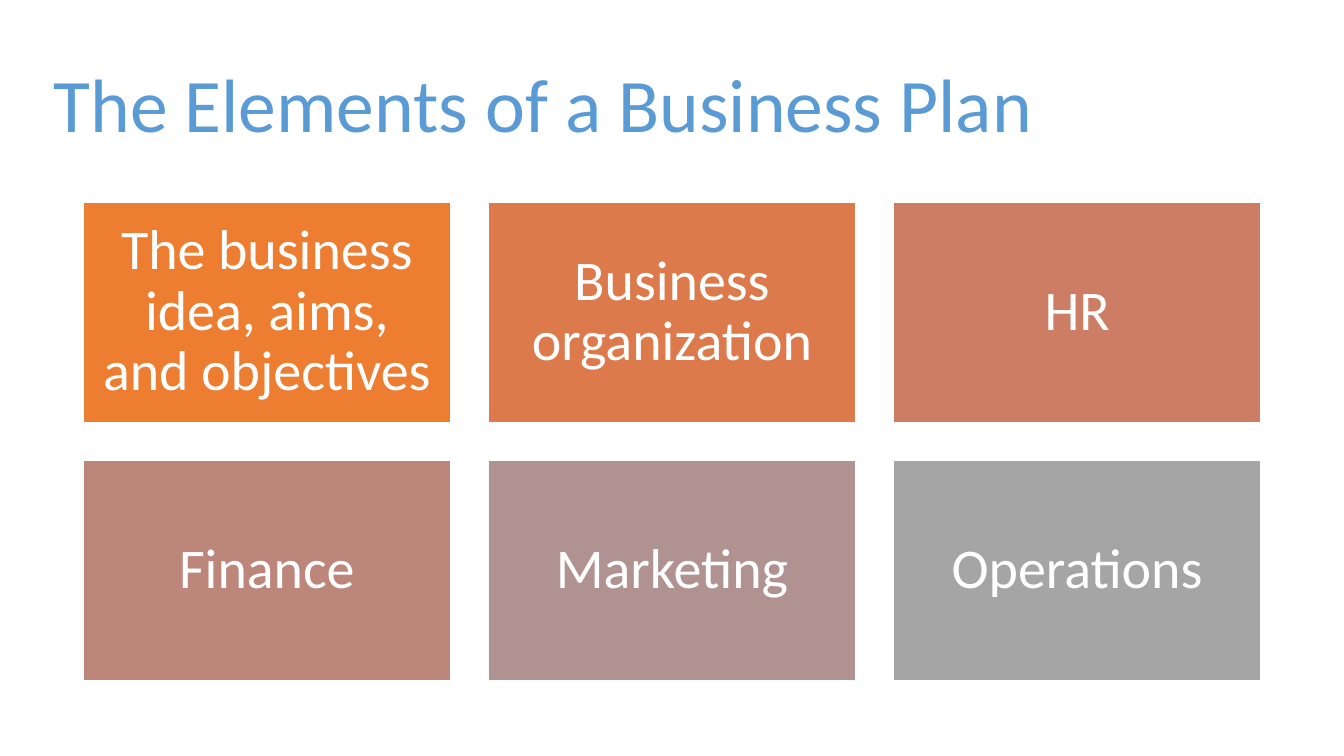
from dataclasses import dataclass

from pptx import Presentation
from pptx.dml.color import RGBColor
from pptx.enum import shapes, text
from pptx.slide import Slide
from pptx.text.text import TextFrame
from pptx.util import Pt

WHITE = RGBColor(0xFF, 0xFF, 0xFF)
BLUE = RGBColor(0x5B, 0x9B, 0xD5)
ORANGE = RGBColor(0xED, 0x7D, 0x31)
BURNT_ORANGE = RGBColor(0xDC, 0x7A, 0x4B)
TERRACOTTA = RGBColor(0xCC, 0x7D, 0x64)
DUSTY_ROSE = RGBColor(0xBD, 0x86, 0x7B)
MAUVE = RGBColor(0xB0, 0x93, 0x91)
GRAY = RGBColor(0xA5, 0xA5, 0xA5)

FONT = "Calibri"
COLUMNS = 3
GRID_LEFT, GRID_TOP = 59.2, 144.2
CARD_WIDTH, CARD_HEIGHT = 262.8, 157.7
GAP = 26.6


@dataclass(frozen=True)
class PlanElement:
    label: str
    fill: RGBColor


PLAN_ELEMENTS = [
    PlanElement("The business idea, aims, and objectives", ORANGE),
    PlanElement("Business organization", BURNT_ORANGE),
    PlanElement("HR", TERRACOTTA),
    PlanElement("Finance", DUSTY_ROSE),
    PlanElement("Marketing", MAUVE),
    PlanElement("Operations", GRAY),
]


def write_text(frame: TextFrame, content: str, *, size: float, color: RGBColor,
               align: text.PP_ALIGN, inset_x: float, inset_y: float) -> None:
    frame.word_wrap = True
    frame.auto_size = text.MSO_AUTO_SIZE.NONE
    frame.vertical_anchor = text.MSO_ANCHOR.MIDDLE
    frame.margin_left = frame.margin_right = Pt(inset_x)
    frame.margin_top = frame.margin_bottom = Pt(inset_y)
    paragraph = frame.paragraphs[0]
    paragraph.alignment = align
    paragraph.line_spacing = 0.9
    run = paragraph.add_run()
    run.text = content
    run.font.name = FONT
    run.font.size = Pt(size)
    run.font.color.rgb = color


def add_title(slide: Slide, content: str) -> None:
    title = slide.shapes.title
    title.left, title.top = Pt(31), Pt(25.2)
    title.width, title.height = Pt(898.6), Pt(104.4)
    write_text(title.text_frame, content, size=54, color=BLUE,
               align=text.PP_ALIGN.LEFT, inset_x=7.2, inset_y=3.6)


def add_card(slide: Slide, element: PlanElement, row: int, column: int) -> None:
    card = slide.shapes.add_shape(
        shapes.MSO_SHAPE.RECTANGLE,
        Pt(GRID_LEFT + column * (CARD_WIDTH + GAP)),
        Pt(GRID_TOP + row * (CARD_HEIGHT + GAP)),
        Pt(CARD_WIDTH), Pt(CARD_HEIGHT))
    card.shadow.inherit = False
    card.fill.solid()
    card.fill.fore_color.rgb = element.fill
    card.line.color.rgb = WHITE
    card.line.width = Pt(1)
    write_text(card.text_frame, element.label, size=40, color=WHITE,
               align=text.PP_ALIGN.CENTER, inset_x=12, inset_y=12)


def main() -> None:
    presentation = Presentation()
    presentation.slide_width, presentation.slide_height = Pt(960), Pt(540)
    title_only = presentation.slide_layouts[5]
    slide = presentation.slides.add_slide(title_only)
    add_title(slide, "The Elements of a Business Plan")
    for index, element in enumerate(PLAN_ELEMENTS):
        add_card(slide, element, *divmod(index, COLUMNS))
    presentation.save("out.pptx")


if __name__ == "__main__":
    main()
